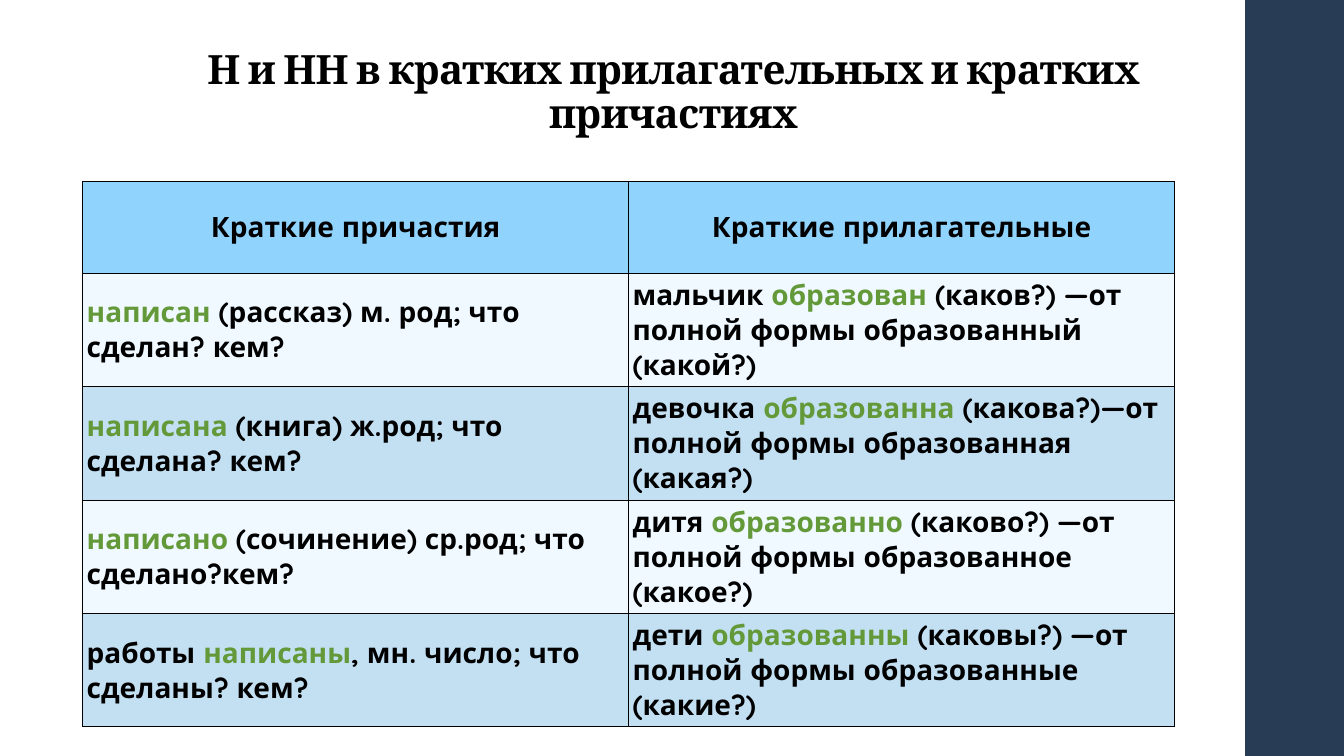
from lxml import etree
from pptx import Presentation, util as u
from pptx.dml.color import RGBColor
from pptx.enum import shapes, text
from pptx.oxml.ns import qn

WIDE, HIGH = u.Inches(13.33), u.Inches(7.5)
NAVY = RGBColor(0x28, 0x3C, 0x55)
BLACK = RGBColor(0, 0, 0)
GREEN = RGBColor(0x64, 0x99, 0x39)
HEAD = RGBColor(0x90, 0xD3, 0xFD)
PALE = RGBColor(0xEF, 0xF9, 0xFF)
BLUE = RGBColor(0xC3, 0xE0, 0xF3)

TITLE = "Н и НН в кратких прилагательных и кратких причастиях"
ROWS = [
    ("Краткие причастия", "Краткие прилагательные"),
    ("*написан *(рассказ) м. род; что сделан? кем?",
     "мальчик *образован* (каков?) —от полной формы образованный (какой?)"),
    ("*написана* (книга) ж.род; что сделана? кем?",
     "девочка *образованна* (какова?)—от полной формы образованная (какая?)"),
    ("*написано* (сочинение) ср.род; что сделано?кем?",
     "дитя *образованно* (каково?) —от полной формы образованное (какое?)"),
    ("работы *написаны*, мн. число; что сделаны? кем?",
     "дети *образованны* (каковы?) —от полной формы образованные (какие?)"),
]


def area(left, top, width, height):
    """Turn inches into a box."""
    return [u.Inches(n) for n in (left, top, width, height)]


def add_band(slide, box):
    """Draw the dark band at the right edge."""
    band = slide.shapes.add_shape(shapes.MSO_SHAPE.RECTANGLE, *box)
    band.shadow.inherit = False
    band.fill.solid()
    band.fill.fore_color.rgb = NAVY
    band.line.fill.background()


def add_title(slide, box):
    """Fill and place the title placeholder."""
    title = slide.shapes.title
    title.left, title.top, title.width, title.height = box
    frame = title.text_frame
    frame.text = TITLE
    frame.word_wrap = True
    frame.auto_size = text.MSO_AUTO_SIZE.NONE
    frame.vertical_anchor = text.MSO_ANCHOR.BOTTOM
    para = frame.paragraphs[0]
    para.alignment = text.PP_ALIGN.CENTER
    para.line_spacing = 0.9
    font = para.runs[0].font
    font.name, font.size, font.bold = "Cambria", u.Pt(28.8), True
    font.color.rgb = BLACK
    para.runs[0]._r.get_or_add_rPr().set("spc", "-50")


def add_edges(cell):
    """Put a thin black line on each side of a cell."""
    props = cell._tc.get_or_add_tcPr()
    for spot, side in enumerate(("lnL", "lnR", "lnT", "lnB")):
        line = etree.Element(qn("a:" + side), w=str(u.Pt(0.75)))
        fill = etree.SubElement(line, qn("a:solidFill"))
        etree.SubElement(fill, qn("a:srgbClr"), val=str(BLACK))
        props.insert(spot, line)


def fill_cell(cell, words, shade, align):
    """Write a cell, with words between stars in green."""
    cell.fill.solid()
    cell.fill.fore_color.rgb = shade
    cell.vertical_anchor = text.MSO_ANCHOR.MIDDLE
    cell.margin_left = cell.margin_right = u.Inches(0.04)
    cell.margin_top = cell.margin_bottom = u.Inches(0.04)
    para = cell.text_frame.paragraphs[0]
    para.alignment = align
    font = para.font
    font.name, font.size, font.bold = "Quicksand", u.Pt(20), True
    for spot, part in enumerate(words.split("*")):
        if part:
            run = para.add_run()
            run.text = part
            run.font.color.rgb = GREEN if spot % 2 else BLACK
    add_edges(cell)


def add_grid(slide, box):
    """Build the table of short forms."""
    table = slide.shapes.add_table(len(ROWS), len(ROWS[0]), *box).table
    for r, row in enumerate(ROWS):
        shade = (BLUE, PALE)[r % 2] if r else HEAD
        align = text.PP_ALIGN.LEFT if r else text.PP_ALIGN.CENTER
        for c, words in enumerate(row):
            fill_cell(table.cell(r, c), words, shade, align)


def main():
    """Make the slide and save it."""
    deck = Presentation()
    deck.slide_width, deck.slide_height = WIDE, HIGH
    slide = deck.slides.add_slide(deck.slide_layouts[5])
    add_band(slide, area(12.35, 0, 0.98, 7.5))
    add_title(slide, area(1.38, 0.4, 10.6, 1.01))
    add_grid(slide, area(0.82, 1.8, 10.83, 4.55))
    deck.save("out.pptx")


if __name__ == "__main__":
    main()
